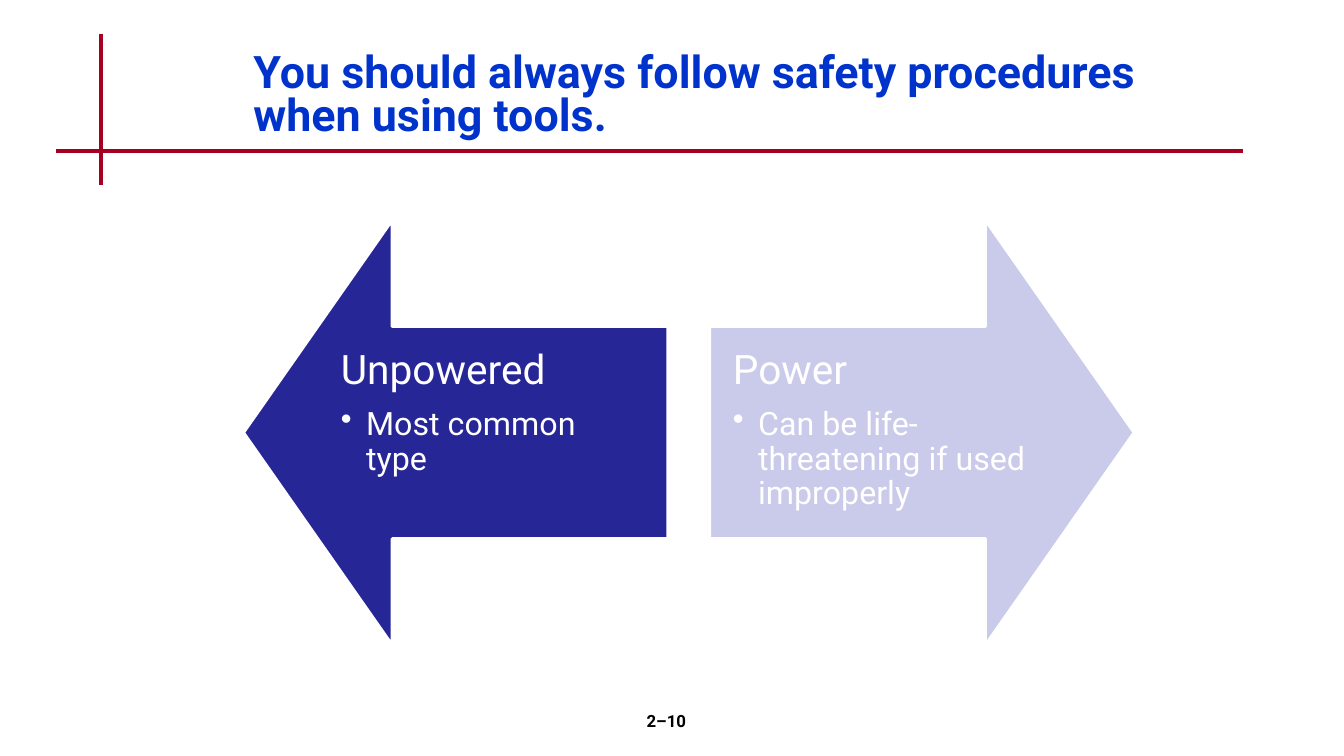
from dataclasses import dataclass

import pptx
import pptx.dml.color
import pptx.enum.shapes
import pptx.enum.text
import pptx.oxml.ns
import pptx.shapes.autoshape
import pptx.slide
import pptx.text.text
import pptx.util
from lxml import etree

Pt = pptx.util.Pt
RGB = pptx.dml.color.RGBColor
Align = pptx.enum.text.PP_ALIGN
Anchor = pptx.enum.text.MSO_ANCHOR


@dataclass(frozen=True)
class Theme:
    font: str = "Roboto"
    rule: RGB = RGB(0xA5, 0x00, 0x21)
    title: RGB = RGB(0x00, 0x33, 0xCC)
    dark: RGB = RGB(0x26, 0x26, 0x97)
    light: RGB = RGB(0xCA, 0xCA, 0xEA)
    white: RGB = RGB(0xFF, 0xFF, 0xFF)
    black: RGB = RGB(0x00, 0x00, 0x00)
    title_size: float = 32
    heading_size: float = 29
    point_size: float = 23
    number_size: float = 12


@dataclass(frozen=True)
class Box:
    left: float
    top: float
    width: float
    height: float


@dataclass(frozen=True)
class Rule:
    start: tuple[float, float]
    end: tuple[float, float]


@dataclass(frozen=True)
class ToolKind:
    heading: str
    point: str
    left: float
    body_offset: float
    rotation: float
    fill: RGB


THEME = Theme()
ARROW_TOP = 157.5
ARROW_SIDE = 303
HEAD_SHARE = 0.35
BODY_SHARE = 0.5
BODY_INSET = 16.5
BODY_WIDTH = ARROW_SIDE * (1 - HEAD_SHARE / 2)

RULES = [Rule((72, 24), (72, 132)), Rule((40, 108), (888, 108))]
TOOL_KINDS = [
    ToolKind("Unpowered", "Most common type", 174, ARROW_SIDE - BODY_WIDTH, 270, THEME.dark),
    ToolKind("Power", "Can be life-threatening if used improperly", 507, 0, 90, THEME.light),
]


def add_rule(slide: pptx.slide.Slide, rule: Rule) -> None:
    line = slide.shapes.add_connector(
        pptx.enum.shapes.MSO_CONNECTOR.STRAIGHT, *map(Pt, rule.start + rule.end))
    line.line.color.rgb = THEME.rule
    line.line.width = Pt(3)
    etree.SubElement(line._element.spPr, pptx.oxml.ns.qn("a:effectLst"))


def add_text_frame(slide: pptx.slide.Slide, box: Box) -> pptx.text.text.TextFrame:
    frame = slide.shapes.add_textbox(
        Pt(box.left), Pt(box.top), Pt(box.width), Pt(box.height)).text_frame
    frame.word_wrap = True
    return frame


def write(paragraph: pptx.text.text._Paragraph, text: str, size: float, color: RGB,
          bold: bool = False, spacing: float = 1.0, after: float = 0) -> None:
    paragraph.text = text
    paragraph.line_spacing = spacing
    paragraph.space_after = Pt(after)
    paragraph.font.name = THEME.font
    paragraph.font.size = Pt(size)
    paragraph.font.bold = bold
    paragraph.font.color.rgb = color


def add_bullet(paragraph: pptx.text.text._Paragraph, indent: float) -> None:
    properties = paragraph._p.get_or_add_pPr()
    properties.set("marL", str(Pt(indent)))
    properties.set("indent", str(-Pt(indent)))
    etree.SubElement(properties, pptx.oxml.ns.qn("a:buChar"), char="•")


def add_tool_kind(slide: pptx.slide.Slide, kind: ToolKind) -> None:
    """Draw a sideways arrow with its heading and point on the arrow's body."""
    arrow = slide.shapes.add_shape(
        pptx.enum.shapes.MSO_SHAPE.UP_ARROW,
        Pt(kind.left), Pt(ARROW_TOP), Pt(ARROW_SIDE), Pt(ARROW_SIDE))
    arrow.rotation = kind.rotation
    arrow.adjustments[0] = BODY_SHARE
    arrow.adjustments[1] = HEAD_SHARE
    arrow.shadow.inherit = False
    arrow.fill.solid()
    arrow.fill.fore_color.rgb = kind.fill
    arrow.line.color.rgb = THEME.white
    arrow.line.width = Pt(2)

    body_height = ARROW_SIDE * BODY_SHARE
    body = add_text_frame(slide, Box(
        kind.left + kind.body_offset, ARROW_TOP + (ARROW_SIDE - body_height) / 2,
        BODY_WIDTH, body_height))
    body.margin_left = body.margin_right = Pt(BODY_INSET)
    body.margin_top = body.margin_bottom = Pt(BODY_INSET)
    write(body.paragraphs[0], kind.heading, THEME.heading_size, THEME.white,
          spacing=0.9, after=10)
    point = body.add_paragraph()
    point.level = 1
    add_bullet(point, 18)
    write(point, kind.point, THEME.point_size, THEME.white, spacing=0.9, after=3.5)


def main() -> None:
    deck = pptx.Presentation()
    deck.slide_width, deck.slide_height = Pt(960), Pt(540)
    slide = deck.slides.add_slide(deck.slide_layouts[6])

    for rule in RULES:
        add_rule(slide, rule)
    for kind in TOOL_KINDS:
        add_tool_kind(slide, kind)

    title = add_text_frame(slide, Box(174, 24, 654, 90))
    title.vertical_anchor = Anchor.MIDDLE
    write(title.paragraphs[0], "You should always follow safety procedures when using tools.",
          THEME.title_size, THEME.title, bold=True, spacing=0.8)

    page_number = add_text_frame(slide, Box(376, 504, 200, 36)).paragraphs[0]
    page_number.alignment = Align.CENTER
    write(page_number, "2–10", THEME.number_size, THEME.black, bold=True)

    deck.save("out.pptx")


if __name__ == "__main__":
    main()
